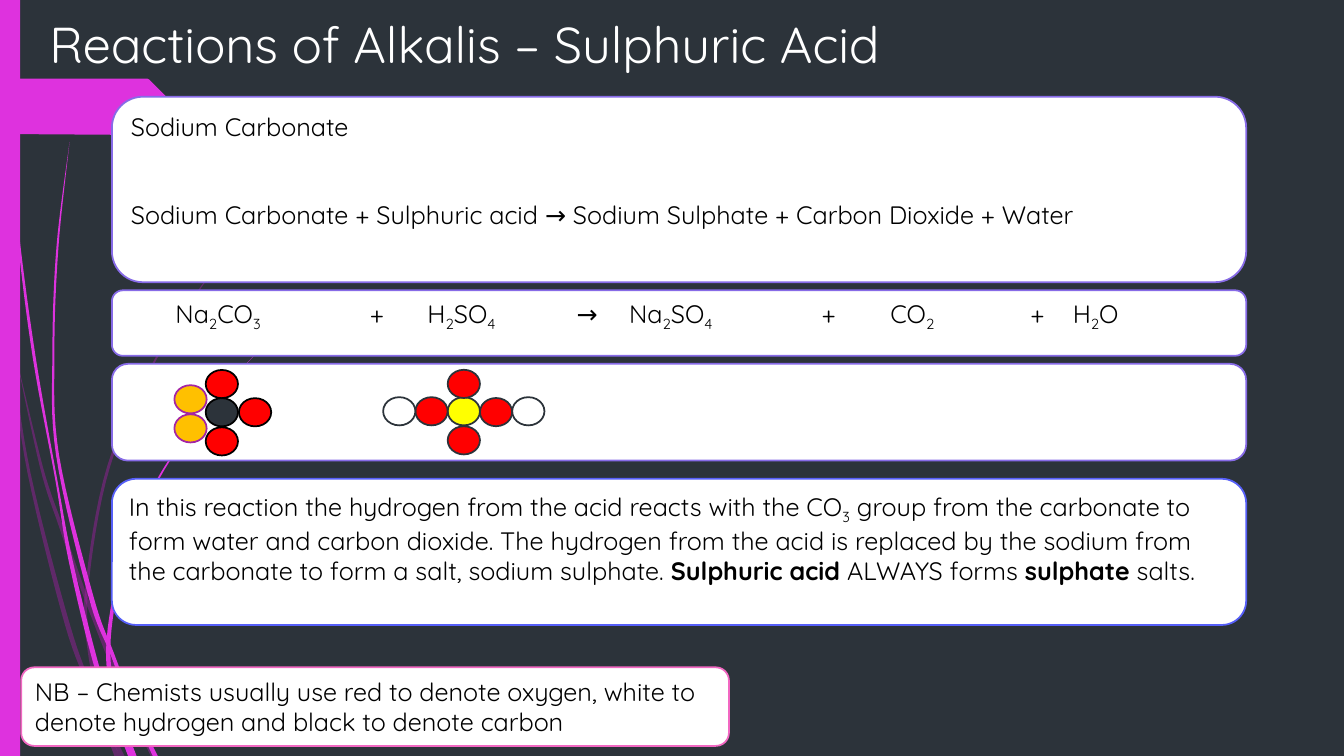
from lxml.etree import SubElement
from pptx import Presentation
from pptx.dml.color import RGBColor as Rgb
from pptx.enum.shapes import MSO_SHAPE as Shape
from pptx.enum.text import MSO_ANCHOR as Anchor, PP_ALIGN as Align
from pptx.oxml.ns import qn
from pptx.util import Inches, Pt

WIDTH, HEIGHT = 13.33, 7.5
FONT = "Quicksand"
COLOURS = {
    "background": "2C333A", "magenta": "DE32DE", "purple": "B01CB0",
    "white": "FFFFFF", "black": "000000", "violet": "876BE7",
    "blue": "565FF8", "pink": "F268C2", "red": "FF0000",
    "yellow": "FFFF00", "amber": "FFC000", "plum": "A425A4",
}
CARD_LEFT, CARD_WIDTH = 1.11, 11.25
ATOM_WIDTH, ATOM_HEIGHT = 0.32, 0.28
FORMULA_STOPS = (0.5, 2.43, 3.0, 4.48, 5.0, 6.91, 7.59, 8.98, 9.4)

PURPLE_STRANDS = [
    [(0, 2.9, 0.02), (0.1, 3.46, 0.02), (0.29, 4.7, 0.03), (0.67, 6.2, 0.05),
     (0.92, 6.88, 0.04), (1.16, 7.5, 0.05)],
    [(0.14, 3.45, 0), (0.41, 4.63, 0.03), (0.6, 5.21, 0.04), (0.86, 5.95, 0.04),
     (1.25, 6.93, 0.04), (1.52, 7.5, 0.05)],
    [(3.12, 1.53, 0), (2.68, 1.98, 0.01), (2.28, 2.45, 0.01), (1.59, 3.48, 0.02),
     (1.08, 4.62, 0.03), (0.86, 5.84, 0.03), (0.89, 6.46, 0.04), (1.02, 7.06, 0.03),
     (1.21, 7.5, 0.05)],
]
MAGENTA_STRANDS = [
    [(0.04, 0, 0.01), (0.07, 1.1, 0.01), (0.18, 2.33, 0.02), (0.34, 3.55, 0.03),
     (0.56, 4.77, 0.02), (0.7, 5.56, 0.04), (0.95, 6.58, 0.05), (1.14, 7.12, 0.03),
     (1.29, 7.5, 0.04)],
    [(0.69, 1.41, 0), (0.57, 2.45, 0.02), (0.53, 3.49, 0.02), (0.57, 4.51, 0.03),
     (0.9, 5.91, 0.05), (1.11, 6.48, 0.04), (1.34, 7.07, 0.04), (1.54, 7.5, 0.05)],
    [(2.6, 3.44, 0), (2.05, 4.06, 0.01), (1.57, 4.75, 0.02), (1.24, 5.51, 0.03),
     (1.08, 6.32, 0.04), (1.13, 6.93, 0.05), (1.33, 7.5, 0.05)],
]


def colour(name):
    """Return a named colour."""
    return Rgb.from_string(COLOURS[name])


def paint(shape, fill, line=None):
    """Give a shape a flat fill and an optional outline."""
    shape.shadow.inherit = False
    shape.fill.solid()
    shape.fill.fore_color.rgb = colour(fill)
    if line:
        shape.line.color.rgb = colour(line)
        shape.line.width = Pt(1.25)
    else:
        shape.line.fill.background()
    return shape


def add_preset(slide, kind, box, fill, line=None):
    """Add a painted preset shape in a box given in inches."""
    shape = slide.shapes.add_shape(kind, *(Inches(length) for length in box))
    return paint(shape, fill, line)


def add_outline(slide, points, fill):
    """Add a painted closed outline through points given in inches."""
    corners = [(Inches(x), Inches(y)) for x, y in points]
    builder = slide.shapes.build_freeform(*corners[0])
    builder.add_line_segments(corners[1:])
    return paint(builder.convert_to_shape(), fill)


def smooth(points, steps=8):
    """Interpolate a Catmull-Rom curve through the points."""
    padded = [points[0], *points, points[-1]]
    curve = []
    for a, b, c, d in zip(padded, padded[1:], padded[2:], padded[3:]):
        for step in range(steps):
            t = step / steps
            curve.append(tuple(
                q + t * (r - p + t * (2 * p - 5 * q + 4 * r - s
                                      + t * (3 * q - p - 3 * r + s))) / 2
                for p, q, r, s in zip(a, b, c, d)))
    return curve + [points[-1]]


def add_strand(slide, strand, fill, alpha=None):
    """Draw one tapering strand from centre points and widths."""
    curve = smooth(strand)
    left = [(max(x - width / 2, 0), y) for x, y, width in curve]
    right = [(x + width / 2, y) for x, y, width in reversed(curve)]
    shape = add_outline(slide, left + right, fill)
    if alpha:
        tint = shape.fill._xPr.find(".//" + qn("a:srgbClr"))
        SubElement(tint, qn("a:alpha"), val=str(alpha * 1000))


def add_decoration(slide):
    """Draw the strands, side band and flag at the left edge."""
    for strand in PURPLE_STRANDS:
        add_strand(slide, strand, "purple", 40)
    for strand in MAGENTA_STRANDS:
        add_strand(slide, strand, "magenta")
    add_preset(slide, Shape.RECTANGLE, (0, 0, 0.2, HEIGHT), "magenta")
    flag = [(0, 0.78), (1.46, 0.78), (1.48, 0.79), (1.73, 1.04), (1.74, 1.06),
            (1.73, 1.08), (1.48, 1.33), (1.46, 1.34), (0, 1.33)]
    add_outline(slide, flag, "magenta")


def add_run(para, text, size=18, ink="black", bold=False, subscript=False):
    """Append one formatted run."""
    run = para.add_run()
    run.text = text
    run.font.name = FONT
    run.font.size = Pt(size)
    run.font.bold = bold
    run.font.color.rgb = colour(ink)
    if subscript:
        run._r.get_or_add_rPr().set("baseline", "-25000")


def add_formula(para, text):
    """Append text in which every digit is a subscript."""
    plain = ""
    for symbol in text:
        if symbol.isdigit():
            add_run(para, plain)
            add_run(para, symbol, subscript=True)
            plain = ""
        else:
            plain += symbol
    if plain:
        add_run(para, plain)


def add_card(slide, box, line="violet"):
    """Add a white rounded card and return its frame and first paragraph."""
    frame = add_preset(slide, Shape.ROUNDED_RECTANGLE, box, "white", line).text_frame
    frame.word_wrap = True
    frame.vertical_anchor = Anchor.TOP
    para = frame.paragraphs[0]
    para.alignment = Align.LEFT
    return frame, para


def add_title(slide, box):
    """Place and format the title placeholder."""
    title = slide.shapes.title
    title.left, title.top, title.width, title.height = map(Inches, box)
    title.text_frame.vertical_anchor = Anchor.TOP
    para = title.text_frame.paragraphs[0]
    para.alignment = Align.LEFT
    add_run(para, "Reactions of Alkalis – Sulphuric Acid", 36, "white")


def add_word_equation(slide, box):
    """Write the word equation card."""
    frame, para = add_card(slide, box)
    frame.margin_top = Inches(0.06)
    add_run(para, "Sodium Carbonate")
    para = frame.add_paragraph()
    para.alignment = Align.LEFT
    para.space_before = Pt(41)
    add_run(para, "Sodium Carbonate + Sulphuric acid → Sodium Sulphate + Carbon Dioxide + Water")


def add_symbol_equation(slide, box):
    """Write the symbol equation on tab stops."""
    _, para = add_card(slide, box)
    stops = SubElement(para._p.get_or_add_pPr(), qn("a:tabLst"))
    for stop in FORMULA_STOPS:
        SubElement(stops, qn("a:tab"), pos=str(Inches(stop)), algn="l")
    add_formula(para, "\tNa2CO3\t+\tH2SO4\t→\tNa2SO4\t+\tCO2\t+\tH2O")


def add_molecule(slide, left, top, atoms):
    """Draw atoms at column and row offsets from the central atom."""
    for column, row, fill, line in atoms:
        box = (left + column * ATOM_WIDTH, top + row * ATOM_HEIGHT, ATOM_WIDTH, ATOM_HEIGHT)
        add_preset(slide, Shape.OVAL, box, fill, line)


def add_models(slide, box):
    """Draw the card with the two molecule models."""
    add_card(slide, box)
    left, top, _, _ = box
    sodium = [(-0.97, row, "amber", "plum") for row in (-0.46, 0.57)]
    carbonate = [(0, 0, "background", "black")]
    carbonate += [(*place, "red", "black") for place in ((0, 1.03), (1.03, 0), (0, -1))]
    add_molecule(slide, left + 0.93, top + 0.34, sodium + carbonate)
    acid = [(0, 0, "yellow", "background")]
    acid += [(*place, "red", "background")
             for place in ((0, 1.03), (0, -0.97), (-1, 0), (1, 0.03))]
    acid += [(column, 0, "white", "background") for column in (-2, 2)]
    add_molecule(slide, left + 3.33, top + 0.33, acid)


def add_explanation(slide, box):
    """Write the explanation card."""
    _, para = add_card(slide, box, "blue")
    add_formula(para, "In this reaction the hydrogen from the acid reacts with the CO3 group "
                "from the carbonate to form water and carbon dioxide. The hydrogen from the acid "
                "is replaced by the sodium from the carbonate to form a salt, sodium sulphate. ")
    for text, bold in (("Sulphuric acid ", True), ("ALWAYS forms ", False),
                       ("sulphate", True), (" salts.", False)):
        add_run(para, text, bold=bold)


def add_note(slide, box):
    """Write the colour convention card."""
    _, para = add_card(slide, box, "pink")
    add_run(para, "NB – Chemists usually use red to denote oxygen, white to denote hydrogen "
            "and black to denote carbon")


def main():
    """Build and save the deck."""
    deck = Presentation()
    deck.slide_width, deck.slide_height = Inches(WIDTH), Inches(HEIGHT)
    slide = deck.slides.add_slide(deck.slide_layouts[5])
    slide.background.fill.solid()
    slide.background.fill.fore_color.rgb = colour("background")
    add_decoration(slide)
    add_title(slide, (0.39, 0.08, 9.75, 1.4))
    rows = ((add_word_equation, 0.96, 1.84), (add_symbol_equation, 2.88, 0.65),
            (add_models, 3.61, 0.96), (add_explanation, 4.75, 1.45))
    for add_region, top, height in rows:
        add_region(slide, (CARD_LEFT, top, CARD_WIDTH, height))
    add_note(slide, (0.21, 6.62, 7.02, 0.78))
    deck.save("out.pptx")


if __name__ == "__main__":
    main()
